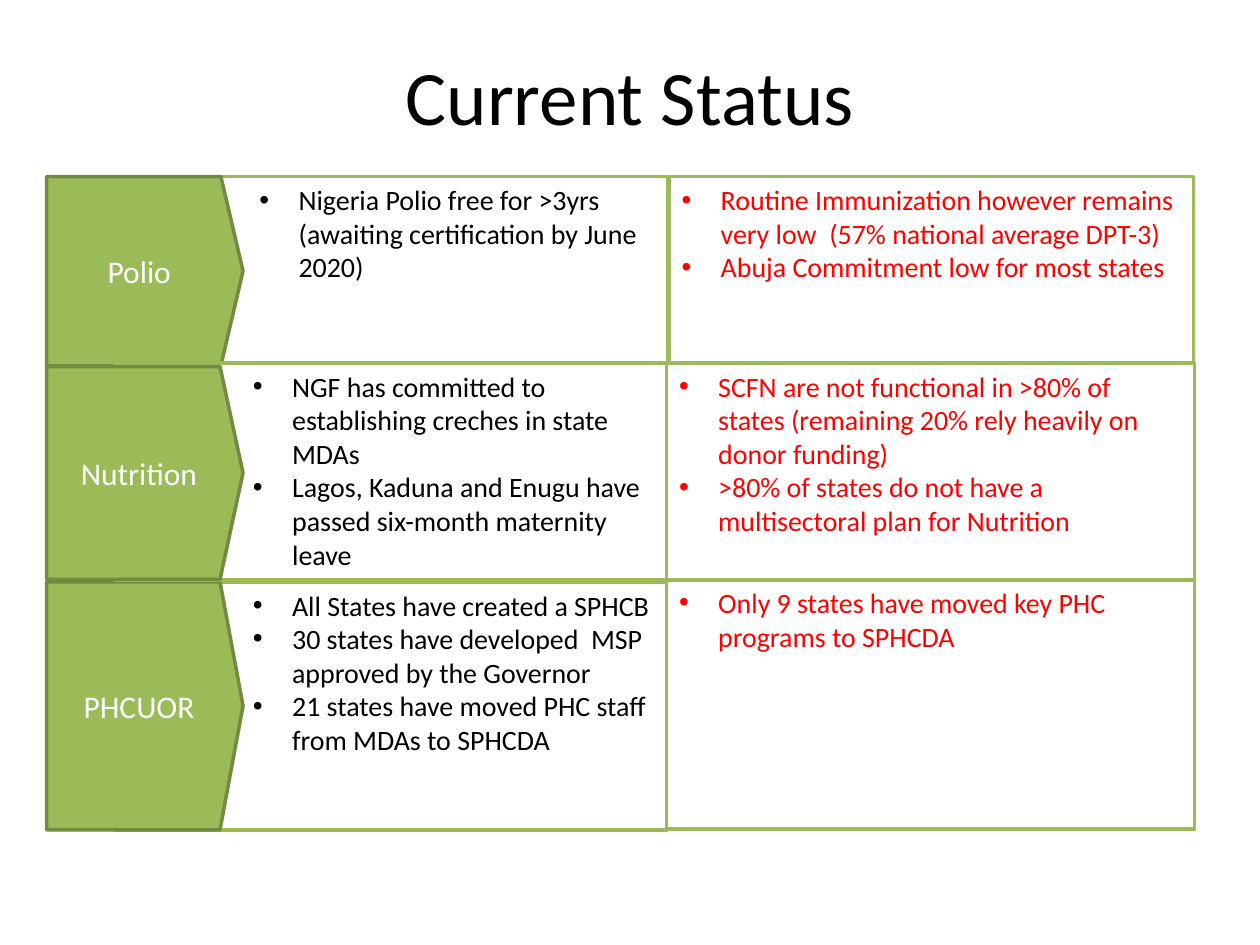
from pptx import Presentation
from pptx.dml.color import RGBColor
from pptx.enum.shapes import MSO_SHAPE as Shape
from pptx.enum.text import MSO_ANCHOR as Anchor, PP_ALIGN as Align
from pptx.oxml.ns import qn
from pptx.util import Cm, Pt
from lxml.etree import SubElement

COLORS = {
    "black": "000000",
    "white": "FFFFFF",
    "red": "FF0000",
    "green": "9BBB59",
    "edge": "738A42",
}
HANGING = 0.79


def rgb(name):
    return RGBColor.from_string(COLORS[name])


def write(tf, lines, size=16, color="black", align=Align.LEFT,
          anchor=Anchor.TOP, indent=None):
    tf.word_wrap = True
    tf.vertical_anchor = anchor
    for i, line in enumerate(lines):
        p = tf.add_paragraph() if i else tf.paragraphs[0]
        p.alignment = align
        if indent is not None:
            pPr = p._p.get_or_add_pPr()
            pPr.set("marL", str(Cm(indent)))
            pPr.set("indent", str(-Cm(HANGING)))
            SubElement(pPr, qn("a:buFont")).set("typeface", "Arial")
            SubElement(pPr, qn("a:buChar")).set("char", "•")
        r = p.add_run()
        r.text = line
        r.font.name = "Calibri"
        r.font.size = Pt(size)
        r.font.color.rgb = rgb(color)


class StatusSlide:
    def __init__(self, prs):
        self.s = prs.slides.add_slide(prs.slide_layouts[6])

    def title(self, text):
        sp = self.s.shapes.add_textbox(Cm(1.27), Cm(0.76), Cm(22.86), Cm(3.18))
        sp.text_frame.margin_top = Cm(0.22)
        write(sp.text_frame, [text], size=44, align=Align.CENTER)

    def block(self, kind, box, fill, line):
        sp = self.s.shapes.add_shape(kind, *(Cm(v) for v in box))
        sp.shadow.inherit = False
        sp.fill.solid()
        sp.fill.fore_color.rgb = rgb(fill)
        sp.line.color.rgb = rgb(line)
        sp.line.width = Pt(2)
        return sp

    def panel(self, box, lines, color, indent):
        sp = self.block(Shape.RECTANGLE, box, "white", "green")
        write(sp.text_frame, lines, color=color, indent=indent)

    def tag(self, top, height, text):
        sp = self.block(Shape.PENTAGON, (0.94, top, 3.96, height), "green", "edge")
        sp.adjustments[0] = 0.117
        write(sp.text_frame, [text], size=18, color="white",
              align=Align.CENTER, anchor=Anchor.MIDDLE)

    def row(self, name, tag, done, done_indent, gap, done_lines, gap_lines):
        self.panel(done, done_lines, "black", done_indent)
        self.tag(*tag, name)
        self.panel(gap, gap_lines, "red", HANGING)


def main():
    prs = Presentation()
    prs.slide_width, prs.slide_height = Cm(25.4), Cm(19.05)
    slide = StatusSlide(prs)
    slide.title("Current Status")
    slide.row(
        "PHCUOR", (11.73, 5), (2.31, 11.73, 11.15, 5), 3.33,
        (13.44, 11.68, 10.64, 5.03),
        ["All States have created a SPHCB",
         "30 states have developed  MSP approved by the Governor",
         "21 states have moved PHC staff from MDAs to SPHCDA"],
        ["Only 9 states have moved key PHC programs to SPHCDA"],
    )
    slide.row(
        "Polio", (3.56, 3.81), (3.71, 3.56, 9.75, 3.76), 2.06,
        (13.49, 3.56, 10.57, 3.76),
        ["Nigeria Polio free for >3yrs (awaiting certification by June 2020)"],
        ["Routine Immunization however remains very low  (57% national average DPT-3)",
         "Abuja Commitment low for most states"],
    )
    slide.row(
        "Nutrition", (7.39, 4.29), (2.31, 7.32, 11.15, 4.37), 3.33,
        (13.44, 7.32, 10.64, 4.37),
        ["NGF has committed to establishing creches in state MDAs",
         "Lagos, Kaduna and Enugu have passed six-month maternity leave"],
        ["SCFN are not functional in >80% of states (remaining 20% rely heavily on donor funding)",
         ">80% of states do not have a multisectoral plan for Nutrition"],
    )
    prs.save("out.pptx")


if __name__ == "__main__":
    main()
